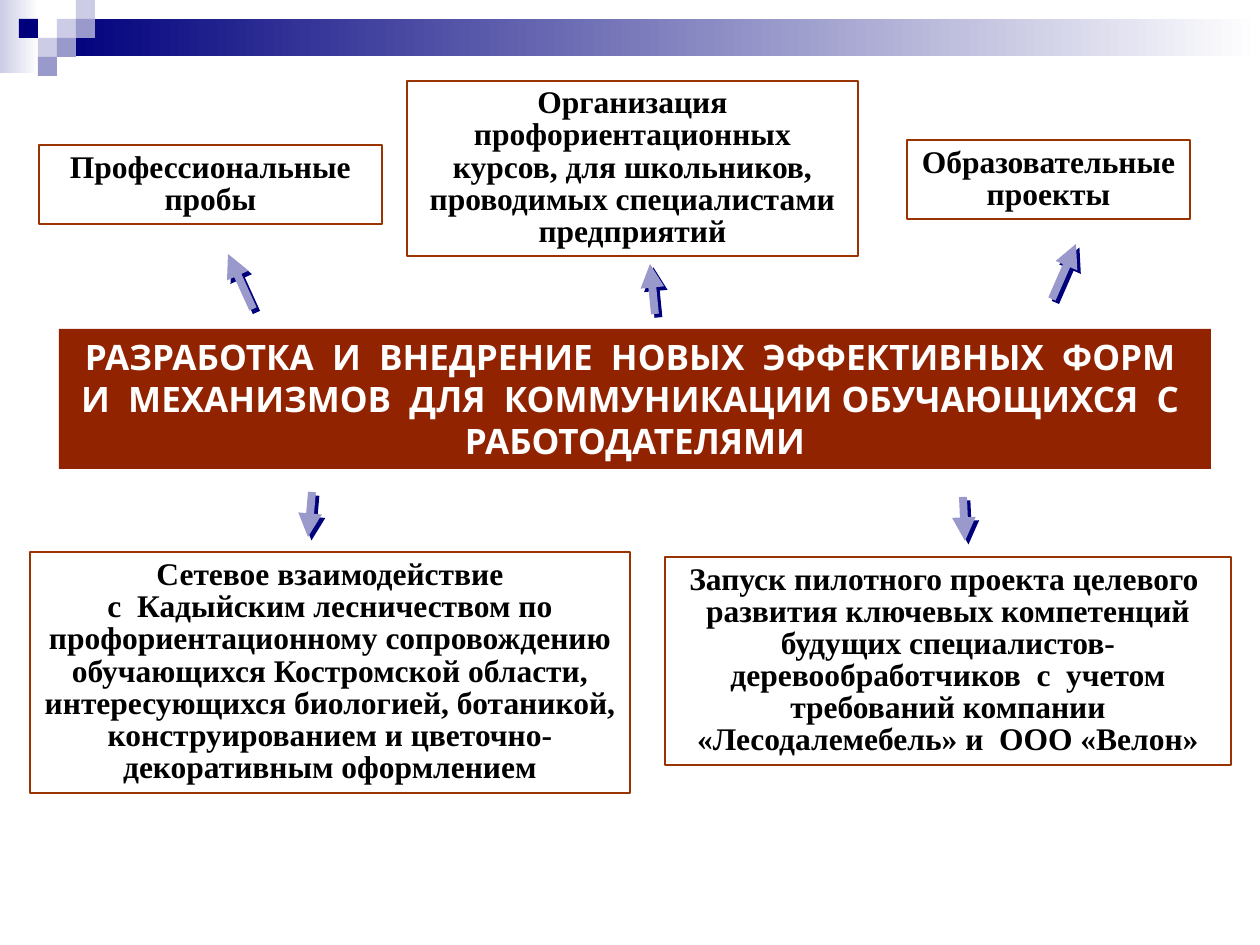
"""Build a slide on new ways for students to communicate with employers."""
from dataclasses import dataclass
from typing import Optional

from lxml.etree import SubElement
from pptx import Presentation
from pptx.dml.color import RGBColor
from pptx.enum.shapes import MSO_CONNECTOR, MSO_SHAPE
from pptx.enum.text import MSO_ANCHOR, MSO_AUTO_SIZE, PP_ALIGN
from pptx.oxml.ns import qn
from pptx.util import Emu, Pt

EMU_PER_PX = 914400 / 126
SQUARE = 19


@dataclass(frozen=True)
class Theme:
    white: str = "FFFFFF"
    black: str = "000000"
    navy: str = "00007D"
    lilac: str = "9999CC"
    pale: str = "CCCCE6"
    brick: str = "922300"
    border: str = "993300"
    heading_font: str = "Noto Sans"
    body_font: str = "Times New Roman"
    heading_size: int = 20
    body_size: int = 18
    border_width: float = 0.75
    arrow_width: float = 4.5
    shadow_distance: float = 2.8
    body_spacing: float = 0.85


THEME = Theme()


@dataclass(frozen=True)
class Area:
    left: int
    top: int
    width: int
    height: int


@dataclass(frozen=True)
class TextStyle:
    font: str
    size: int
    color: str
    anchor: MSO_ANCHOR
    spacing: Optional[float] = None


@dataclass(frozen=True)
class Card:
    area: Area
    text: str


@dataclass(frozen=True)
class Arrow:
    start: tuple[int, int]
    end: tuple[int, int]


@dataclass(frozen=True)
class Square:
    column: int
    row: int
    color: str


HEADING_STYLE = TextStyle(THEME.heading_font, THEME.heading_size, THEME.white, MSO_ANCHOR.TOP)
BODY_STYLE = TextStyle(
    THEME.body_font, THEME.body_size, THEME.black, MSO_ANCHOR.MIDDLE, THEME.body_spacing
)

FADES = [
    (Area(0, 0, 39, 73), THEME.pale),
    (Area(57, 19, 1203, 37), THEME.navy),
]
SQUARES = [
    Square(3, 1, THEME.pale),
    Square(4, 0, THEME.pale),
    Square(4, 1, THEME.lilac),
    Square(2, 2, THEME.pale),
    Square(1, 1, THEME.navy),
    Square(3, 2, THEME.lilac),
    Square(2, 3, THEME.lilac),
]
HEADING = Card(
    Area(59, 329, 1152, 140),
    "РАЗРАБОТКА  И  ВНЕДРЕНИЕ  НОВЫХ  ЭФФЕКТИВНЫХ  ФОРМ  И  МЕХАНИЗМОВ  ДЛЯ  "
    "КОММУНИКАЦИИ ОБУЧАЮЩИХСЯ  С  РАБОТОДАТЕЛЯМИ",
)
CARDS = [
    Card(
        Area(407, 81, 451, 175),
        "Организация профориентационных курсов, для школьников, "
        "проводимых специалистами предприятий",
    ),
    Card(
        Area(30, 552, 600, 241),
        "Сетевое взаимодействие\n"
        "с  Кадыйским лесничеством по профориентационному сопровождению обучающихся "
        "Костромской области, интересующихся биологией, ботаникой, конструированием "
        "и цветочно-декоративным оформлением",
    ),
    Card(
        Area(665, 557, 566, 208),
        "Запуск пилотного проекта целевого  развития ключевых компетенций будущих "
        "специалистов-деревообработчиков  с  учетом требований компании "
        "«Лесодалемебель» и  ООО «Велон»",
    ),
    Card(Area(39, 145, 343, 79), "Профессиональные пробы"),
    Card(Area(907, 140, 283, 79), "Образовательные проекты"),
]
ARROWS = [
    Arrow((253, 309), (228, 254)),
    Arrow((655, 314), (650, 264)),
    Arrow((1052, 299), (1076, 244)),
    Arrow((963, 497), (965, 541)),
    Arrow((312, 492), (308, 537)),
]


def px(length: int) -> Emu:
    """Turn pixels into EMU."""
    return Emu(round(length * EMU_PER_PX))


def rgb(color: str) -> RGBColor:
    """Turn a hex string into a colour."""
    return RGBColor.from_string(color)


def add_box(slide, area: Area, color: str, border: Optional[str] = None):
    """Add a flat rectangle, with a thin border if one is given."""
    box = slide.shapes.add_shape(
        MSO_SHAPE.RECTANGLE, px(area.left), px(area.top), px(area.width), px(area.height)
    )
    box.shadow.inherit = False
    box.fill.solid()
    box.fill.fore_color.rgb = rgb(color)
    if border:
        box.line.color.rgb = rgb(border)
        box.line.width = Pt(THEME.border_width)
    else:
        box.line.fill.background()
    return box


def add_fade(slide, area: Area, color: str) -> None:
    """Add a rectangle that fades from a colour to white, left to right."""
    box = add_box(slide, area, color)
    box.fill.gradient()
    box.fill.gradient_angle = 0
    for stop, stop_color in zip(box.fill.gradient_stops, (color, THEME.white)):
        stop.color.rgb = rgb(stop_color)


def write_text(box, text: str, style: TextStyle) -> None:
    """Write centred bold text into a box."""
    frame = box.text_frame
    frame.text = text
    frame.word_wrap = True
    frame.auto_size = MSO_AUTO_SIZE.SHAPE_TO_FIT_TEXT
    frame.vertical_anchor = style.anchor
    for para in frame.paragraphs:
        para.alignment = PP_ALIGN.CENTER
        para.line_spacing = style.spacing
        for span in para.runs:
            span.font.name = style.font
            span.font.size = Pt(style.size)
            span.font.bold = True
            span.font.color.rgb = rgb(style.color)


def add_arrow(slide, arrow: Arrow) -> None:
    """Add a thick arrow with a hard shadow to the lower right."""
    line = slide.shapes.add_connector(
        MSO_CONNECTOR.STRAIGHT, *map(px, arrow.start), *map(px, arrow.end)
    )
    line.line.color.rgb = rgb(THEME.lilac)
    line.line.width = Pt(THEME.arrow_width)
    SubElement(line.line._get_or_add_ln(), qn("a:tailEnd"), type="triangle")
    effects = SubElement(line._element.spPr, qn("a:effectLst"))
    shadow = SubElement(
        effects, qn("a:outerShdw"), dist=str(Pt(THEME.shadow_distance)),
        dir=str(45 * 60000), algn="ctr", rotWithShape="0",
    )
    SubElement(shadow, qn("a:srgbClr"), val=THEME.navy)


def main() -> None:
    """Draw the slide and save the deck."""
    deck = Presentation()
    deck.slide_width, deck.slide_height = px(1260), px(945)
    slide = deck.slides.add_slide(deck.slide_layouts[6])
    for area, color in FADES:
        add_fade(slide, area, color)
    for square in SQUARES:
        area = Area(square.column * SQUARE, square.row * SQUARE, SQUARE, SQUARE)
        add_box(slide, area, square.color)
    write_text(add_box(slide, HEADING.area, THEME.brick), HEADING.text, HEADING_STYLE)
    for card in CARDS:
        write_text(add_box(slide, card.area, THEME.white, THEME.border), card.text, BODY_STYLE)
    for arrow in ARROWS:
        add_arrow(slide, arrow)
    deck.save("out.pptx")


if __name__ == "__main__":
    main()
